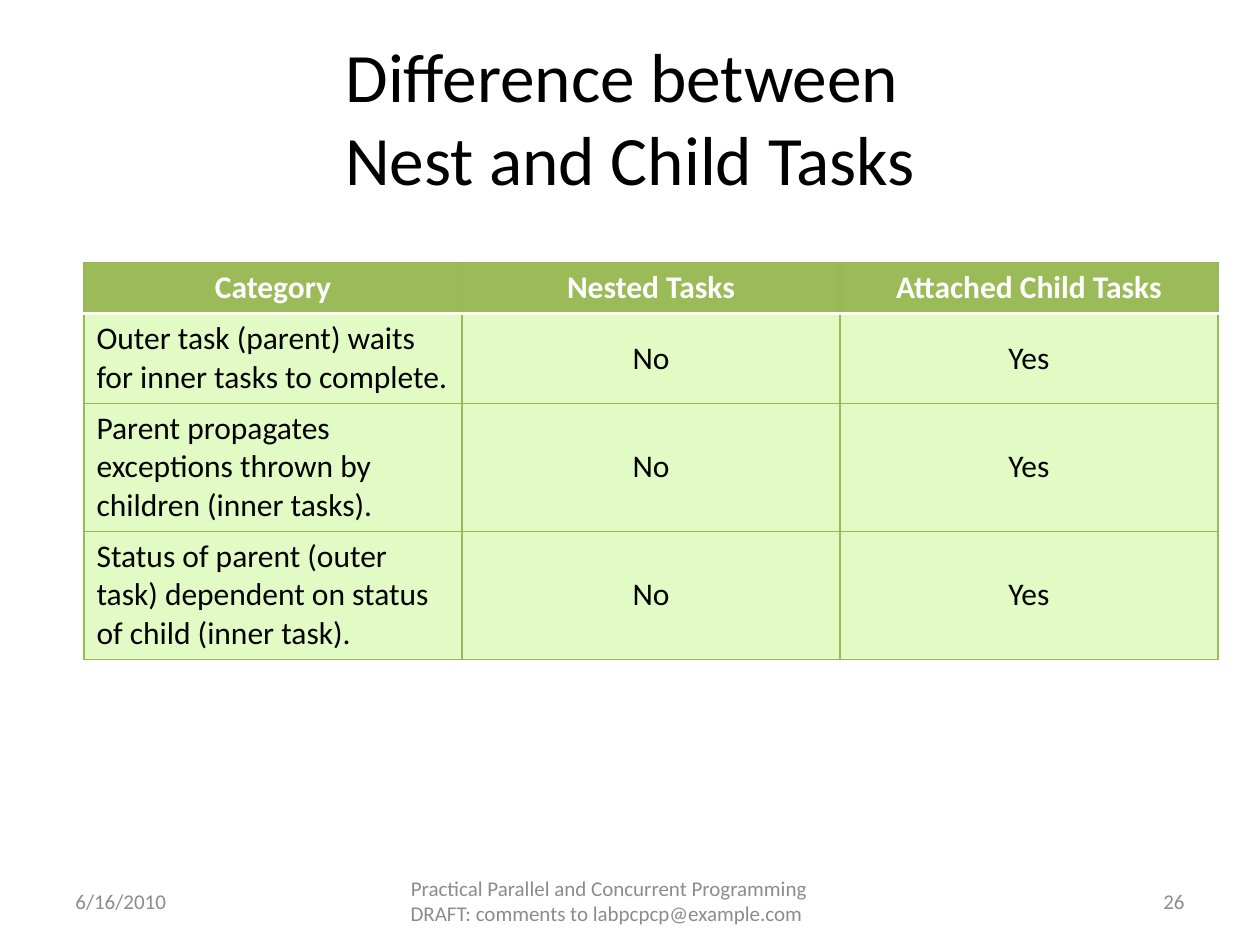
from pptx import Presentation
from pptx.dml.color import RGBColor
from pptx.enum.text import MSO_ANCHOR as Anchor, PP_ALIGN as Align
from pptx.oxml.ns import qn
from pptx.util import Pt
from lxml.etree import SubElement

HUES = {"ink": "000000", "white": "FFFFFF", "gray": "8C8C8C",
        "head": "9BBB59", "body": "E2FAC3", "edge": "98B955"}
ROWS = [
    ("Category", "Nested Tasks", "Attached Child Tasks"),
    ("Outer task (parent) waits for inner tasks to complete.", "No", "Yes"),
    ("Parent propagates exceptions thrown by children (inner tasks).", "No", "Yes"),
    ("Status of parent (outer task) dependent on status of child (inner task).", "No", "Yes"),
]
HEIGHTS = (29.16, 51.1, 73.1, 73.1)
FOOTS = [
    (36, 168, "6/16/2010", Align.LEFT),
    (222, 252, "Practical Parallel and Concurrent Programming "
     "DRAFT: comments to labpcpcp@example.com ", Align.CENTER),
    (516, 168, "26", Align.RIGHT),
]


def style(frame, size, hue, align, bold=False):
    frame.word_wrap = True
    for para in frame.paragraphs:
        para.alignment = align
        font = para.font
        font.name, font.size, font.bold = "Calibri", Pt(size), bold
        font.color.rgb = RGBColor.from_string(HUES[hue])


def add_title(slide):
    title = slide.shapes.title
    title.left, title.top, title.width, title.height = Pt(36), Pt(21.6), Pt(648), Pt(90)
    frame = title.text_frame
    frame.text = "Difference between \vNest and Child Tasks"
    frame.vertical_anchor = Anchor.MIDDLE
    style(frame, 39.6, "ink", Align.CENTER)


def set_edge(cell, side, hue, width):
    line = SubElement(cell._tc.get_or_add_tcPr(), qn("a:" + side), w=str(Pt(width)))
    fill = SubElement(line, qn("a:solidFill"))
    SubElement(fill, qn("a:srgbClr"), val=HUES[hue])


def fill_cell(cell, text, row, col):
    head = row == 0
    cell.text = text
    cell.vertical_anchor = Anchor.MIDDLE
    align = Align.CENTER if head or col else Align.LEFT
    style(cell.text_frame, 18, "white" if head else "ink", align, head)
    for side in ("lnL", "lnR", "lnT", "lnB"):
        split = (row, side) in ((0, "lnB"), (1, "lnT"))
        set_edge(cell, side, *(("white", 2) if split else ("edge", 0.75)))
    cell.fill.solid()
    cell.fill.fore_color.rgb = RGBColor.from_string(HUES["head" if head else "body"])


def add_grid(slide):
    table = slide.shapes.add_table(len(ROWS), 3, Pt(48), Pt(150), Pt(648),
                                   Pt(sum(HEIGHTS))).table
    for row, (texts, height) in enumerate(zip(ROWS, HEIGHTS)):
        table.rows[row].height = Pt(height)
        for col, text in enumerate(texts):
            fill_cell(table.cell(row, col), text, row, col)


def add_foot(slide, left, width, text, align):
    frame = slide.shapes.add_textbox(Pt(left), Pt(500.5), Pt(width), Pt(28.75)).text_frame
    frame.text = text
    frame.vertical_anchor = Anchor.MIDDLE
    style(frame, 12, "gray", align)


def main():
    deck = Presentation()
    deck.slide_width, deck.slide_height = Pt(720), Pt(540)
    slide = deck.slides.add_slide(deck.slide_layouts[5])
    add_title(slide)
    add_grid(slide)
    for foot in FOOTS:
        add_foot(slide, *foot)
    deck.save("out.pptx")


main()
